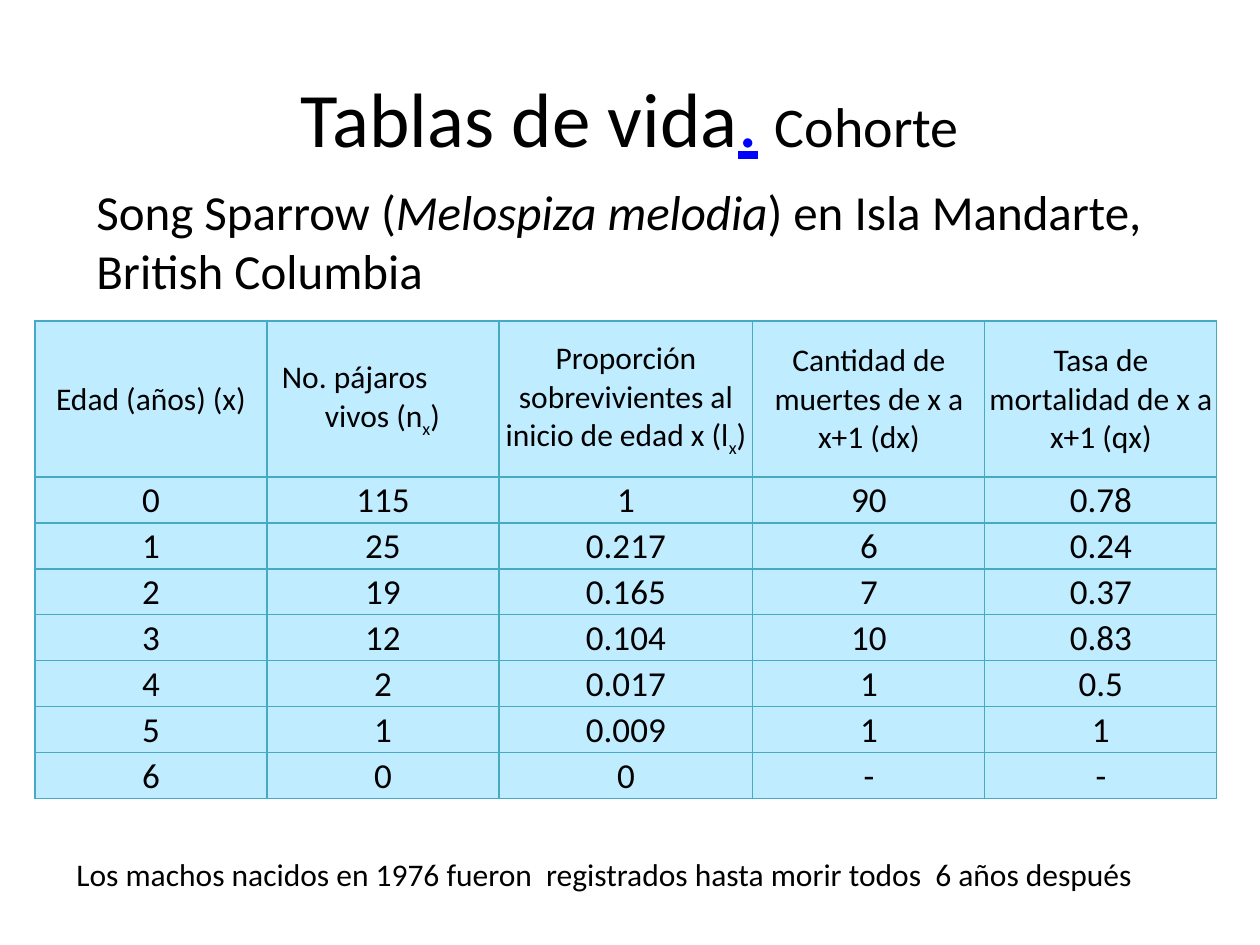
from typing import NamedTuple

from lxml.etree import SubElement
from pptx import Presentation
from pptx.dml.color import RGBColor
from pptx.enum.text import MSO_ANCHOR as Anchor, MSO_AUTO_SIZE as Fit, PP_ALIGN as Align
from pptx.oxml import parse_xml
from pptx.oxml.ns import nsdecls, qn
from pptx.util import Emu, Pt

FONT = "Calibri"
BLACK, BLUE, PALE, TEAL = "000000", "0000FF", "BFECFF", "46AAC5"


class Run(NamedTuple):
    text: str
    size: int
    color: str = BLACK
    italic: bool = False
    line: bool = False
    sub: bool = False


class Box(NamedTuple):
    x: int
    y: int
    w: int
    h: int
    runs: list[Run]
    align: Align = Align.LEFT
    anchor: Anchor = Anchor.TOP
    fit: Fit = Fit.SHAPE_TO_FIT_TEXT


def px(n: int) -> Emu:
    return Emu(round(n * 914400 / 126))


def rgb(code: str) -> RGBColor:
    return RGBColor.from_string(code)


def write(para, runs: list[Run]) -> None:
    for item in runs:
        if item.text == "\n":
            para.add_line_break()
            continue
        run = para.add_run()
        run.text = item.text
        font = run.font
        font.name, font.size = FONT, Pt(item.size)
        font.color.rgb = rgb(item.color)
        font.italic, font.underline = item.italic, item.line
        if item.sub:
            run._r.get_or_add_rPr().set("baseline", "-25000")


def draw_box(slide, box: Box) -> None:
    shape = slide.shapes.add_textbox(px(box.x), px(box.y), px(box.w), px(box.h))
    frame = shape.text_frame
    frame.word_wrap, frame.auto_size = True, box.fit
    frame.vertical_anchor = box.anchor
    para = frame.paragraphs[0]
    para.alignment = box.align
    write(para, box.runs)


def edge(cell) -> None:
    """Draw a thin line on all four sides of the cell."""
    props = cell._tc.get_or_add_tcPr()
    for i, side in enumerate("LRTB"):
        line = parse_xml(f'<a:ln{side} {nsdecls("a")} w="{Pt(0.75)}"/>')
        fill = SubElement(line, qn("a:solidFill"))
        SubElement(fill, qn("a:srgbClr"), val=TEAL)
        props.insert(i, line)


def draw_cell(cell, runs: list[Run]) -> None:
    cell.fill.solid()
    cell.fill.fore_color.rgb = rgb(PALE)
    cell.margin_left = cell.margin_right = cell.margin_top = px(1)
    cell.margin_bottom = 0
    cell.vertical_anchor = Anchor.MIDDLE
    para = cell.text_frame.paragraphs[0]
    para.alignment = Align.CENTER
    write(para, runs)
    edge(cell)


def hang(cell, first: int, rest: int) -> None:
    """Left-align the cell, with its own indent for the first line."""
    para = cell.text_frame.paragraphs[0]
    para.alignment = Align.LEFT
    props = para._p.get_or_add_pPr()
    props.set("marL", str(px(rest)))
    props.set("indent", str(px(first - rest)))


def head(text: str, sub: str = "", end: str = "") -> list[Run]:
    runs = [Run(text, 18)]
    return runs + [Run(sub, 18, sub=True), Run(end, 18)] if sub else runs


BOXES = [
    Box(63, 38, 1134, 157,
        [Run("Tablas de vida", 44), Run(".", 44, BLUE, line=True),
         Run(" ", 44), Run("Cohorte", 32)],
        Align.CENTER, Anchor.MIDDLE, Fit.NONE),
    Box(84, 175, 1091, 131,
        [Run("Song Sparrow (", 28), Run("Melospiza melodia", 28, italic=True),
         Run(") en Isla Mandarte, British Columbia", 28)]),
    Box(64, 849, 1142, 50,
        [Run("Los machos nacidos en 1976 fueron  registrados hasta morir todos"
             "  6 años después", 18)]),
]

HEADS = [
    head("Edad (años) (x)"),
    [Run("No. pájaros", 18), Run("\n", 18), *head("vivos (n", "x", ")")],
    head("Proporción sobrevivientes al inicio de edad x (l", "x", ")"),
    head("Cantidad de muertes de x a x+1 (dx)"),
    head("Tasa de mortalidad de x a x+1 (qx)"),
]
LIVES = [
    ("0", "115", "1", "90", "0.78"),
    ("1", "25", "0.217", "6", "0.24"),
    ("2", "19", "0.165", "7", "0.37"),
    ("3", "12", "0.104", "10", "0.83"),
    ("4", "2", "0.017", "1", "0.5"),
    ("5", "1", "0.009", "1", "1"),
    ("6", "0", "0", "-", "-"),
]
COLS = [232, 232, 254, 232, 232]
ROWS = [156] + [46] * len(LIVES)


def draw_table(slide) -> None:
    table = slide.shapes.add_table(
        len(ROWS), len(COLS), px(35), px(321), px(sum(COLS)), px(sum(ROWS))).table
    for col, w in zip(table.columns, COLS):
        col.width = px(w)
    for row, h in zip(table.rows, ROWS):
        row.height = px(h)
    body = [[[Run(text, 20)] for text in life] for life in LIVES]
    for r, line in enumerate([HEADS, *body]):
        for c, runs in enumerate(line):
            draw_cell(table.cell(r, c), runs)
    hang(table.cell(0, 1), 14, 57)


def main() -> None:
    deck = Presentation()
    deck.slide_width, deck.slide_height = px(1260), px(945)
    slide = deck.slides.add_slide(deck.slide_layouts[6])
    title, intro, note = BOXES
    draw_box(slide, title)
    draw_box(slide, intro)
    draw_table(slide)
    draw_box(slide, note)
    deck.save("out.pptx")


if __name__ == "__main__":
    main()
